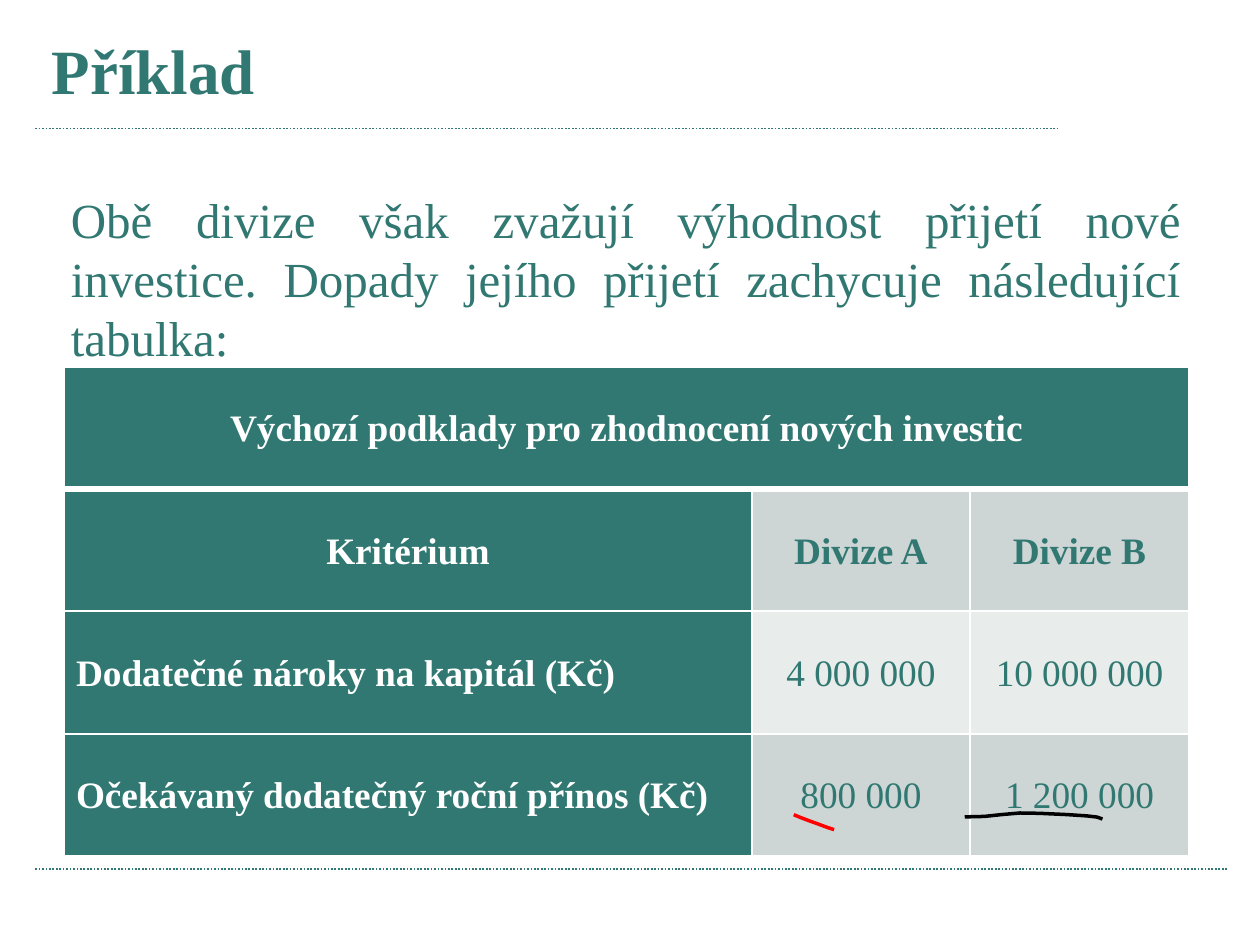
"""Build the slide comparing the new investments of two divisions."""
from dataclasses import dataclass

from lxml.etree import SubElement
from pptx import Presentation
from pptx.dml.color import RGBColor
from pptx.enum.dml import MSO_LINE
from pptx.enum.shapes import MSO_CONNECTOR
from pptx.enum.text import MSO_ANCHOR, PP_ALIGN
from pptx.oxml.ns import qn
from pptx.util import Emu, Inches, Pt

WIDTH = Inches(7.5)
HEIGHT = Emu(WIDTH * 3 // 4)


@dataclass(frozen=True)
class Theme:
    font: str = "Times New Roman"
    teal: str = "307871"
    white: str = "FFFFFF"
    band: str = "CDD6D5"
    light_band: str = "E8ECEB"
    red: str = "FF0000"
    black: str = "000000"
    title_size: float = 27
    body_size: float = 21
    table_size: float = 16
    rule_width: float = 0.75
    pen_width: float = 1.5
    border: float = 1
    header_border: float = 3


@dataclass(frozen=True)
class TextBlock:
    text: str
    left: float
    top: float
    width: float
    height: float
    size: float
    bold: bool
    align: PP_ALIGN


@dataclass(frozen=True)
class Rule:
    left: float
    right: float
    top: float


@dataclass(frozen=True)
class Stroke:
    color: str
    points: tuple


THEME = Theme()

RULES = (Rule(2.8, 83.87, 13.6), Rule(2.8, 97.47, 91.95))

TEXTS = (
    TextBlock("Příklad", 2.8, 2.49, 88.13, 10.5, THEME.title_size, True,
              PP_ALIGN.LEFT),
    TextBlock("Obě divize však zvažují výhodnost přijetí nové investice. "
              "Dopady jejího přijetí zachycuje následující tabulka:",
              4.31, 19.2, 90.8, 26.85, THEME.body_size, False, PP_ALIGN.JUSTIFY),
)

TABLE_LEFT, TABLE_TOP, TABLE_HEIGHT = 5.11, 38.8, 51.78
COLUMNS = (54.55, 17.35, 17.35)
ROWS = (
    ("Výchozí podklady pro zhodnocení nových investic", "", ""),
    ("Kritérium", "Divize A", "Divize B"),
    ("Dodatečné nároky na kapitál (Kč)", "4 000 000", "10 000 000"),
    ("Očekávaný dodatečný roční přínos (Kč)", "800 000", "1 200 000"),
)

STROKES = (
    Stroke(THEME.red, ((66.2, 87.8), (65.73, 87.6), (64.93, 87.2),
                       (64.4, 86.95), (63.6, 86.55), (63, 86.22))),
    Stroke(THEME.black, ((87.5, 86.67), (87.07, 86.47), (86.27, 86.34),
                         (84.67, 86.2), (82.5, 86.07), (80.95, 86.03),
                         (79.5, 86.2), (78.13, 86.4), (76.57, 86.45))),
)


def across(percent: float) -> Emu:
    """Turn a percentage of the slide width into a length."""
    return Emu(round(WIDTH * percent / 100))


def down(percent: float) -> Emu:
    """Turn a percentage of the slide height into a length."""
    return Emu(round(HEIGHT * percent / 100))


def format_paragraph(p, size: float, color: str, bold: bool,
                     align: PP_ALIGN) -> None:
    """Format a paragraph and its runs."""
    p.alignment = align
    for r in p.runs:
        r.font.name = THEME.font
        r.font.size = Pt(size)
        r.font.bold = bold
        r.font.color.rgb = RGBColor.from_string(color)


def add_rule(slide, rule: Rule) -> None:
    """Draw a dotted horizontal rule."""
    y = down(rule.top)
    sp = slide.shapes.add_connector(MSO_CONNECTOR.STRAIGHT, across(rule.left), y,
                                    across(rule.right), y)
    sp.line.color.rgb = RGBColor.from_string(THEME.teal)
    sp.line.width = Pt(THEME.rule_width)
    sp.line.dash_style = MSO_LINE.ROUND_DOT
    SubElement(sp._element.spPr, qn("a:effectLst"))


def add_text(slide, block: TextBlock) -> None:
    """Draw a wrapped text box."""
    sp = slide.shapes.add_textbox(across(block.left), down(block.top),
                                  across(block.width), down(block.height))
    tf = sp.text_frame
    tf.text = block.text
    tf.word_wrap = True
    tf.vertical_anchor = MSO_ANCHOR.TOP
    format_paragraph(tf.paragraphs[0], block.size, THEME.teal, block.bold,
                     block.align)


def set_borders(cell, row: int) -> None:
    """Give a cell white borders, thicker below the header."""
    heavy = {(0, "lnB"), (1, "lnT")}
    properties = cell._tc.get_or_add_tcPr()
    for index, side in enumerate(("lnL", "lnR", "lnT", "lnB")):
        width = THEME.header_border if (row, side) in heavy else THEME.border
        line = SubElement(properties, qn(f"a:{side}"), w=str(int(Pt(width))))
        fill = SubElement(line, qn("a:solidFill"))
        SubElement(fill, qn("a:srgbClr"), val=THEME.white)
        properties.insert(index, line)


def fill_cell(cell, text: str, row: int, col: int) -> None:
    """Write and style one table cell."""
    heading = row == 0 or col == 0
    band = THEME.light_band if row == 2 else THEME.band
    cell.fill.solid()
    cell.fill.fore_color.rgb = RGBColor.from_string(THEME.teal if heading else band)
    cell.margin_left = cell.margin_right = Inches(0.07)
    cell.margin_top = cell.margin_bottom = 0
    cell.vertical_anchor = MSO_ANCHOR.MIDDLE
    cell.text_frame.text = text
    p = cell.text_frame.paragraphs[0]
    p.line_spacing = 1.07
    format_paragraph(p, THEME.table_size, THEME.white if heading else THEME.teal,
                     heading or row == 1,
                     PP_ALIGN.JUSTIFY if row > 1 and col == 0 else PP_ALIGN.CENTER)
    set_borders(cell, row)


def add_investment_table(slide) -> None:
    """Draw the table of investment criteria."""
    table = slide.shapes.add_table(len(ROWS), len(COLUMNS), across(TABLE_LEFT),
                                   down(TABLE_TOP), across(sum(COLUMNS)),
                                   down(TABLE_HEIGHT)).table
    for column, width in zip(table.columns, COLUMNS):
        column.width = across(width)
    for i, texts in enumerate(ROWS):
        table.rows[i].height = down(TABLE_HEIGHT / len(ROWS))
        for j, text in enumerate(texts):
            fill_cell(table.cell(i, j), text, i, j)
    table.cell(0, 0).merge(table.cell(0, len(COLUMNS) - 1))


def add_stroke(slide, stroke: Stroke) -> None:
    """Draw an open pen stroke."""
    start, *rest = [(across(x), down(y)) for x, y in stroke.points]
    builder = slide.shapes.build_freeform(*start)
    builder.add_line_segments(rest, close=False)
    sp = builder.convert_to_shape()
    sp.shadow.inherit = False
    sp.fill.background()
    sp.line.color.rgb = RGBColor.from_string(stroke.color)
    sp.line.width = Pt(THEME.pen_width)


def main() -> None:
    """Build and save the presentation."""
    prs = Presentation()
    prs.slide_width, prs.slide_height = WIDTH, HEIGHT
    slide = prs.slides.add_slide(prs.slide_layouts[6])
    for rule in RULES:
        add_rule(slide, rule)
    for block in TEXTS:
        add_text(slide, block)
    add_investment_table(slide)
    for stroke in STROKES:
        add_stroke(slide, stroke)
    prs.save("out.pptx")


if __name__ == "__main__":
    main()
